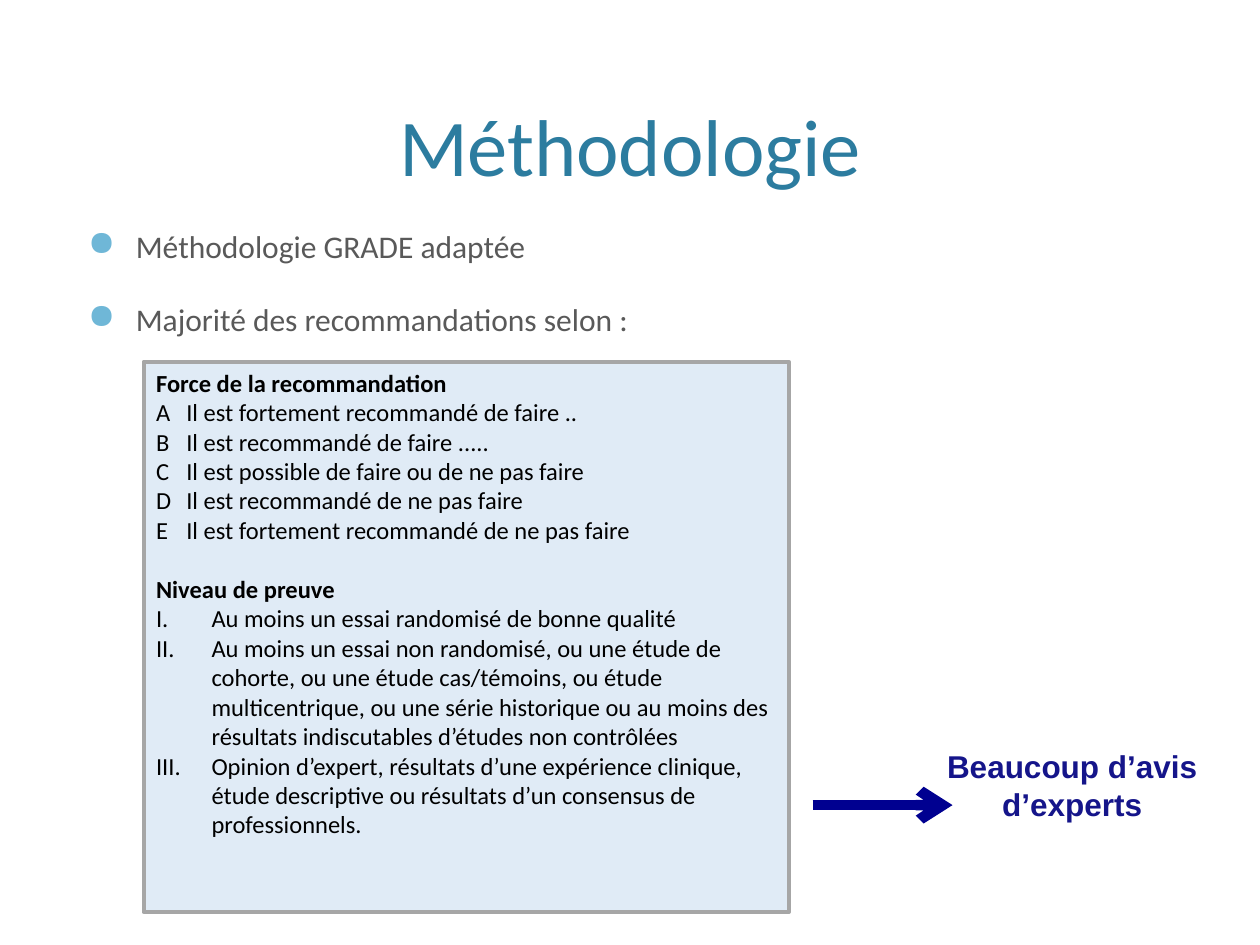
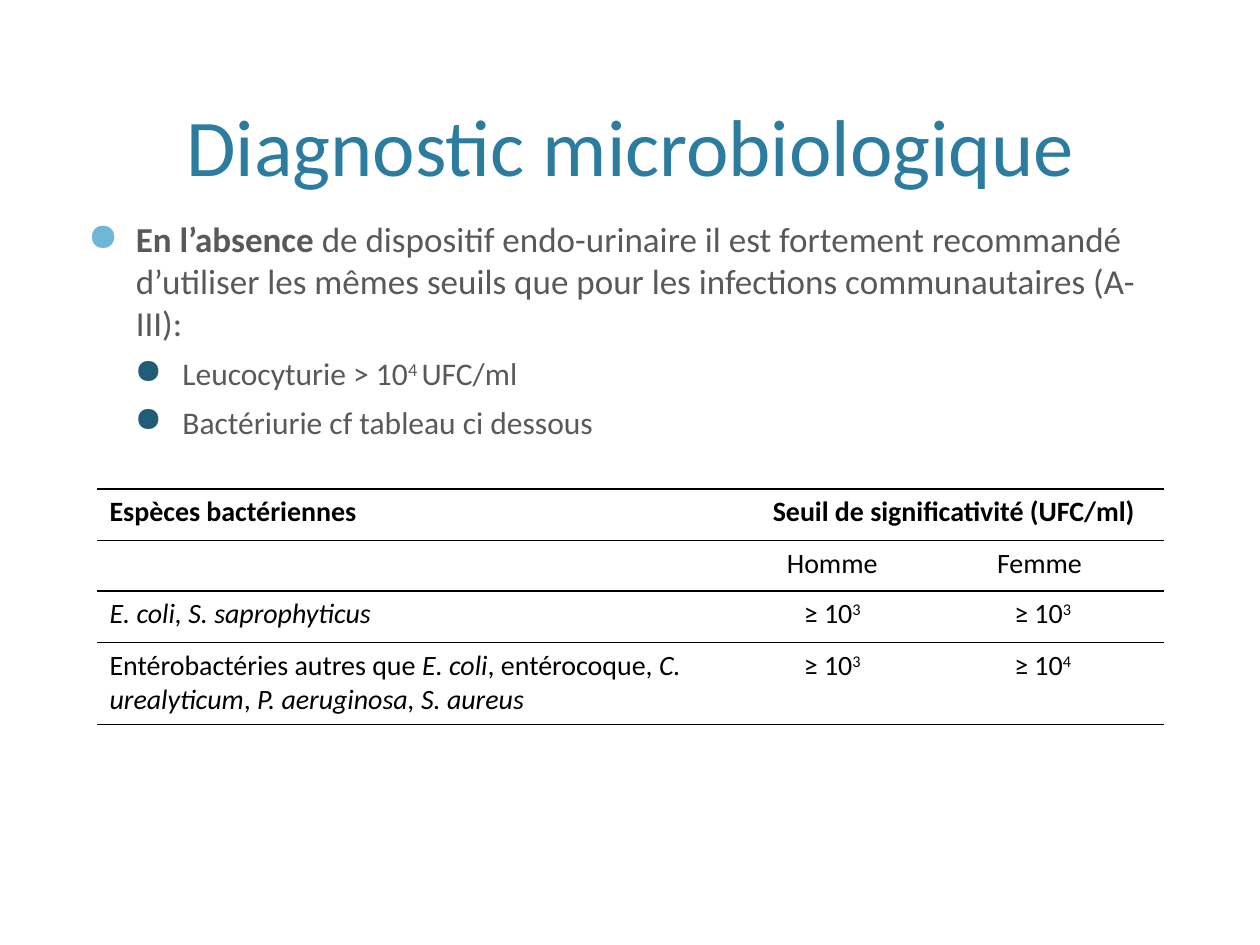
from dataclasses import dataclass

from lxml.etree import SubElement
from pptx import Presentation
from pptx.dml.color import RGBColor as Color
from pptx.enum.shapes import MSO_CONNECTOR as Connector, MSO_SHAPE as Shape
from pptx.enum.text import MSO_ANCHOR as Anchor, PP_ALIGN as Align
from pptx.oxml.ns import qn
from pptx.util import Inches, Pt

BOLD, ITALIC, RAISED = "bold", "italic", "raised"
PLAIN_TABLE_STYLE = "{2D5ABB26-0587-4C30-8999-92F81FD0307C}"


@dataclass(frozen=True)
class Theme:
    font: str = "Calibri"
    callout_font: str = "Arial"
    title: str = "2C7C9F"
    body: str = "595959"
    ink: str = "000000"
    bullets: tuple = ("6FB7D7", "215D77")
    panel: str = "E0EBF6"
    panel_edge: str = "A6A6A6"
    callout: str = "15158A"
    arrow: str = "000090"
    title_size: int = 46
    lead_size: int = 20
    body_size: int = 18
    table_size: int = 16
    panel_size: int = 14


THEME = Theme()
TITLE_BOX = (0.6, 0.12, 8.8, 1.46)

STRENGTHS = (
    ("A", "Il est fortement recommandé de faire .."),
    ("B", "Il est recommandé de faire ....."),
    ("C", "Il est possible de faire ou de ne pas faire"),
    ("D", "Il est recommandé de ne pas faire"),
    ("E", "Il est fortement recommandé de ne pas faire"),
)
EVIDENCE_LEVELS = (
    "Au moins un essai randomisé de bonne qualité",
    "Au moins un essai non randomisé, ou une étude de cohorte, ou une étude "
    "cas/témoins, ou étude multicentrique, ou une série historique ou au moins "
    "des résultats indiscutables d’études non contrôlées",
    "Opinion d’expert, résultats d’une expérience clinique, étude descriptive "
    "ou résultats d’un consensus de professionnels.",
)


def threshold(power):
    return [("≥ 10", None), (power, RAISED)]


SPECIES_ROWS = (
    ([("Espèces bactériennes", BOLD)],
     [("Seuil de significativité (UFC/ml)", BOLD)], None),
    (None, "Homme", "Femme "),
    ([("E. coli, S. saprophyticus", ITALIC)], threshold("3"), threshold("3")),
    ([("Entérobactéries autres que ", None), ("E. coli", ITALIC),
      (", entérocoque, ", None), ("C. urealyticum", ITALIC), (", ", None),
      ("P. aeruginosa, S. aureus", ITALIC)], threshold("3"), threshold("4")),
)


def inches(lengths):
    return [Inches(length) for length in lengths]


def next_paragraph(frame):
    """Return the empty first paragraph, or a new one after the text."""
    first = frame.paragraphs[0]
    return frame.add_paragraph() if first.runs else first


def write(para, content, size, color, font=THEME.font, align=Align.LEFT, bold=False):
    """Fill a paragraph from a string or from (text, mark) pairs."""
    para.alignment = align
    para.font.name = font
    para.font.size = Pt(size)
    para.font.color.rgb = Color.from_string(color)
    para.font.bold = bold
    for text, mark in [(content, None)] if isinstance(content, str) else content:
        span = para.add_run()
        span.text = text
        if mark == BOLD:
            span.font.bold = True
        elif mark == ITALIC:
            span.font.italic = True
        elif mark == RAISED:
            span._r.get_or_add_rPr().set("baseline", "30000")


def hang(para, margin, hanging):
    """Indent a paragraph and pull its first line back."""
    props = para._p.get_or_add_pPr()
    props.set("marL", str(Inches(margin)))
    props.set("indent", str(-Inches(hanging)))
    return props


def add_text_box(page, box):
    frame = page.shapes.add_textbox(*inches(box)).text_frame
    frame.word_wrap = True
    return frame


def add_title(page, text):
    frame = add_text_box(page, TITLE_BOX)
    frame.vertical_anchor = Anchor.BOTTOM
    write(frame.paragraphs[0], text, THEME.title_size, THEME.title, align=Align.CENTER)


def add_bullets(page, box, items):
    """Write (level, size, content) items as a bulleted list."""
    frame = add_text_box(page, box)
    for index, (level, size, content) in enumerate(items):
        para = next_paragraph(frame)
        para.level = level
        if index:
            para.space_before = Pt(6 if level else 20)
        props = hang(para, 0.75 if level else 0.38, 0.38)
        tint = SubElement(props, qn("a:buClr"))
        SubElement(tint, qn("a:srgbClr"), val=THEME.bullets[level])
        SubElement(props, qn("a:buSzPct"), val="110000")
        SubElement(props, qn("a:buChar"), char="●")
        write(para, content, size, THEME.body)


def add_grading_panel(page, box):
    panel = page.shapes.add_shape(Shape.RECTANGLE, *inches(box))
    panel.shadow.inherit = False
    panel.fill.solid()
    panel.fill.fore_color.rgb = Color.from_string(THEME.panel)
    panel.line.color.rgb = Color.from_string(THEME.panel_edge)
    panel.line.width = Pt(2.25)
    frame = panel.text_frame
    frame.word_wrap = True
    frame.vertical_anchor = Anchor.TOP

    def line(content, para=None, bold=False):
        write(para or next_paragraph(frame), content, THEME.panel_size, THEME.ink, bold=bold)

    line("Force de la recommandation", bold=True)
    for grade, meaning in STRENGTHS:
        para = next_paragraph(frame)
        hang(para, 0.24, 0.24)
        line(f"{grade}\t{meaning}", para)
    heading = next_paragraph(frame)
    heading.space_before = Pt(17)
    line("Niveau de preuve", heading, bold=True)
    for level in EVIDENCE_LEVELS:
        para = next_paragraph(frame)
        SubElement(hang(para, 0.44, 0.44), qn("a:buAutoNum"), type="romanUcPeriod")
        line(level, para)


def add_expert_callout(page, box):
    """Write the remark and the arrow that leads to it from the left."""
    left, top, _, _ = box
    frame = add_text_box(page, box)
    write(frame.paragraphs[0], "Beaucoup d’avis d’experts", THEME.body_size,
          THEME.callout, THEME.callout_font, Align.CENTER, bold=True)
    ends = inches((left - 0.68, top + 0.51, left + 0.43, top + 0.51))
    arrow = page.shapes.add_connector(Connector.STRAIGHT, *ends)
    arrow.line.color.rgb = Color.from_string(THEME.arrow)
    arrow.line.width = Pt(6)
    SubElement(arrow.line._get_or_add_ln(), qn("a:tailEnd"), type="arrow")
    SubElement(arrow._element.spPr, qn("a:effectLst"))


def rule_cell(cell):
    """Draw the lines above and below a cell and leave it unfilled."""
    props = cell._tc.get_or_add_tcPr()
    for side in ("a:lnT", "a:lnB"):
        edge = SubElement(props, qn(side), w=str(Pt(1)))
        paint = SubElement(edge, qn("a:solidFill"))
        SubElement(paint, qn("a:srgbClr"), val=THEME.ink)
    cell.fill.background()


def add_species_table(page, box):
    widths, heights = (5.13, 1.41, 1.93), (0.41, 0.4, 0.41, 0.65)
    graphic = page.shapes.add_table(len(heights), len(widths), *inches(box))
    table = graphic.table
    table.first_row = table.horz_banding = False
    table._tbl.tblPr.find(qn("a:tableStyleId")).text = PLAIN_TABLE_STYLE
    for column, width in zip(table.columns, widths):
        column.width = Inches(width)
    for row, height, contents in zip(table.rows, heights, SPECIES_ROWS):
        row.height = Inches(height)
        for index, (cell, content) in enumerate(zip(row.cells, contents)):
            rule_cell(cell)
            write(cell.text_frame.paragraphs[0], content or [], THEME.table_size,
                  THEME.ink, align=Align.CENTER if index else Align.LEFT)
    table.cell(0, 1).merge(table.cell(0, 2))


def build_methodology(page):
    add_title(page, "Méthodologie")
    add_bullets(page, (0.6, 1.75, 8.8, 4.75), [
        (0, THEME.body_size, "Méthodologie GRADE adaptée"),
        (0, THEME.body_size, "Majorité des recommandations selon :"),
    ])
    add_grading_panel(page, (1.14, 2.87, 5.12, 4.37))
    add_expert_callout(page, (7.13, 5.88, 2.76, 0.79))


def build_diagnosis(page):
    add_title(page, "Diagnostic microbiologique")
    add_bullets(page, (0.6, 1.68, 8.8, 5.75), [
        (0, THEME.lead_size, [
            ("En l’absence ", BOLD),
            ("de dispositif endo-urinaire il est fortement recommandé d’utiliser les "
             "mêmes seuils que pour les infections communautaires (A-III):", None)]),
        (1, THEME.body_size, [
            ("Leucocyturie > 10", None), ("4 ", RAISED), ("UFC/ml", None)]),
        (1, THEME.body_size, "Bactériurie cf tableau ci dessous"),
    ])
    add_species_table(page, (0.77, 3.88, 8.47, 1.87))


def main():
    deck = Presentation()
    deck.slide_width, deck.slide_height = Inches(10), Inches(7.5)
    blank = deck.slide_layouts[6]
    for build in (build_methodology, build_diagnosis):
        build(deck.slides.add_slide(blank))
    deck.save("out.pptx")


if __name__ == "__main__":
    main()
